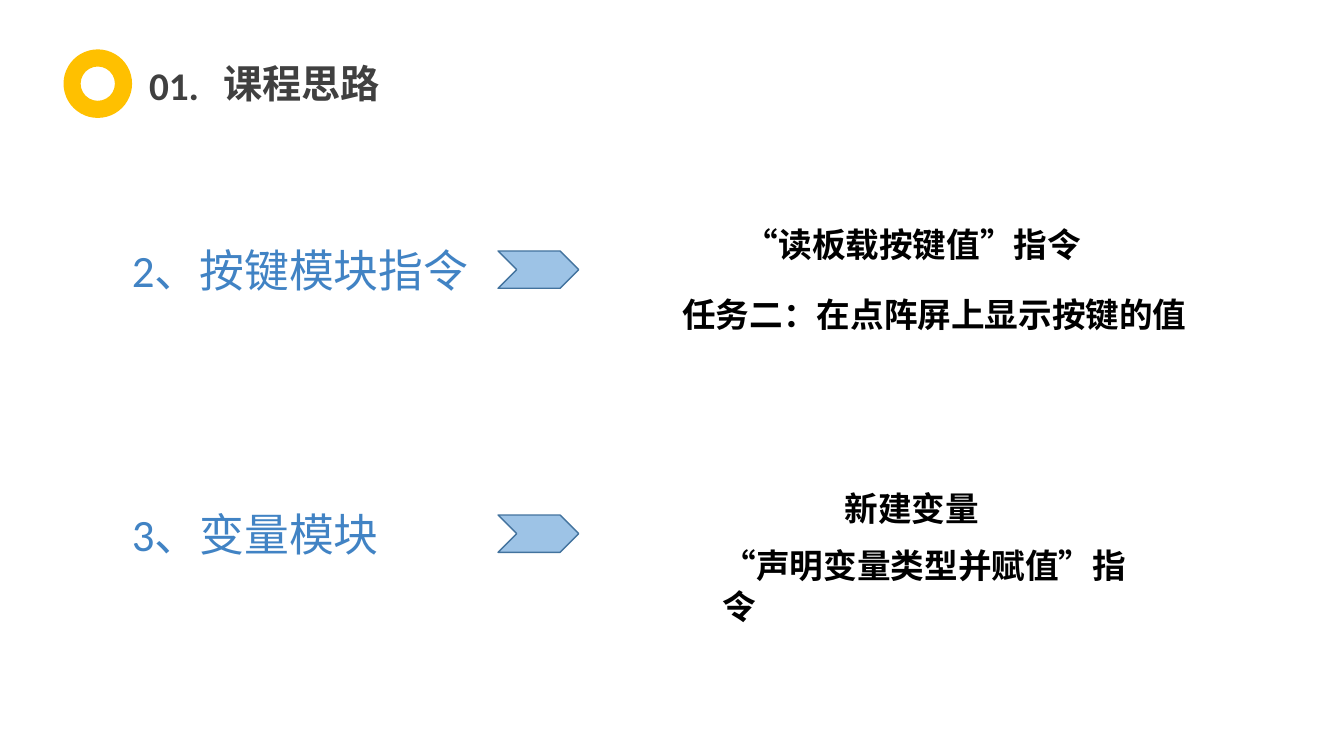
from pptx import Presentation
from pptx.dml.color import RGBColor
from pptx.enum.lang import MSO_LANGUAGE_ID as LANG
from pptx.enum.shapes import MSO_SHAPE as SHAPE
from pptx.enum.text import MSO_AUTO_SIZE as AUTO, PP_ALIGN as ALIGN
from pptx.util import Inches, Pt

COLORS = {"gold": "FFC000", "title": "404040", "topic": "4183C4",
          "detail": "000000", "arrow": "9DC3E6", "arrow_line": "43739E"}
FORMATS = {
    "title": {"size": Pt(28), "bold": True},
    "topic": {"size": Pt(32), "bold": False},
    "detail": {"size": Pt(24), "bold": True},
}


def add_text(shapes, text, style, box, wrap=False, align=ALIGN.LEFT):
    s = shapes.add_textbox(*map(Inches, box))
    tf = s.text_frame
    tf.word_wrap = wrap
    tf.auto_size = AUTO.SHAPE_TO_FIT_TEXT
    p = tf.paragraphs[0]
    p.alignment = align
    r = p.add_run()
    r.text = text
    fmt = {"name": "Calibri", "language_id": LANG.SIMPLIFIED_CHINESE, **FORMATS[style]}
    for name, value in fmt.items():
        setattr(r.font, name, value)
    r.font.color.rgb = RGBColor.from_string(COLORS[style])


def add_preset(shapes, kind, box, fill, line=None):
    s = shapes.add_shape(kind, *map(Inches, box))
    s.shadow.inherit = False
    s.fill.solid()
    s.fill.fore_color.rgb = RGBColor.from_string(COLORS[fill])
    if line:
        s.line.color.rgb = RGBColor.from_string(COLORS[line])
        s.line.width = Pt(1)
    else:
        s.line.fill.background()


prs = Presentation()
prs.slide_width = Inches(13.33)
prs.slide_height = Inches(7.5)
slide = prs.slides.add_slide(prs.slide_layouts[6])
shapes = slide.shapes

heading = shapes.add_group_shape()
add_text(heading.shapes, "课程思路", "title", (2.1, 0.54, 1.78, 0.57), align=ALIGN.CENTER)
add_text(heading.shapes, "01.", "title", (1.38, 0.56, 0.75, 0.57))
add_preset(shapes, SHAPE.DONUT, (0.63, 0.49, 0.68, 0.68), "gold")

topics = [("2、按键模块指令", 2.36, 3.57), ("3、变量模块", 4.98, 2.67)]
for text, top, width in topics:
    add_text(shapes, text, "topic", (1.21, top, width, 0.64))
    add_preset(shapes, SHAPE.CHEVRON, (4.94, top + 0.13, 0.8, 0.37), "arrow", "arrow_line")

details = [
    ("“读板载按键值”指令", 7.29, 2.17, 3.68, False),
    ("任务二：在点阵屏上显示按键的值", 6.67, 2.87, 5.23, False),
    ("新建变量", 8.28, 4.79, 4.41, True),
    ("“声明变量类型并赋值”指令", 7.07, 5.36, 4.41, True),
]
for text, left, top, width, wrap in details:
    add_text(shapes, text, "detail", (left, top, width, 0.5), wrap)

prs.save("out.pptx")
